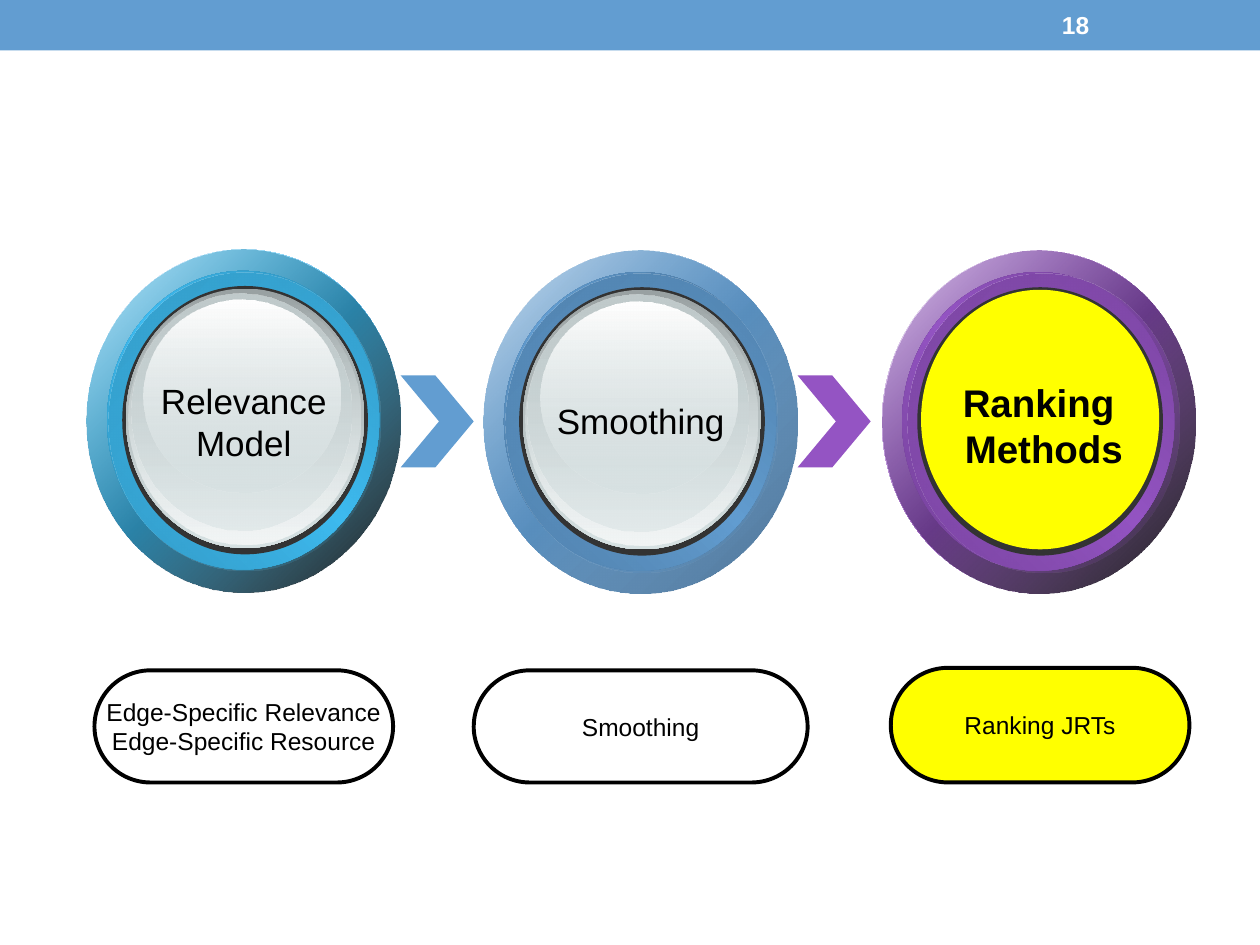
from dataclasses import dataclass

from lxml import etree
from pptx import Presentation
from pptx import util as u
from pptx.dml.color import RGBColor
from pptx.enum import shapes, text
from pptx.oxml import ns


@dataclass(frozen=True)
class Theme:
    font: str = "Arial"
    ink: str = "000000"
    white: str = "FFFFFF"
    blue: str = "629DD1"
    cyan: str = "3EBBF0"
    purple: str = "9454C3"
    highlight: str = "FFFF00"
    bezel: str = "333333"
    silver: str = "D6E1E2"
    small: int = 14
    label: int = 20
    strong: int = 22
    outline: float = 2.25


@dataclass(frozen=True)
class Stop:
    position: int
    color: str
    opacity: int = 100


@dataclass(frozen=True)
class Gradient:
    angle: int
    stops: tuple[Stop, ...]


@dataclass(frozen=True)
class Area:
    left: float
    top: float
    width: float
    height: float


@dataclass(frozen=True)
class Dial:
    left: float
    top: float
    color: str
    shade: Stop
    rim_dark: str
    gloss_dark: str
    gloss_shift: float = 0
    highlighted: bool = False


@dataclass(frozen=True)
class Label:
    area: Area
    lines: tuple[str, ...]
    size: int
    bold: bool = False
    wrap: bool = True
    color: str = "000000"
    align: text.PP_ALIGN = text.PP_ALIGN.CENTER
    anchor: text.MSO_ANCHOR = text.MSO_ANCHOR.TOP


@dataclass(frozen=True)
class Pill:
    label: Label
    fill: str


THEME = Theme()
Kind = shapes.MSO_SHAPE

DIALS = (
    Dial(7, 1.99, THEME.purple, Stop(100, THEME.ink, 90), "714095", "7A45A0", 0.03, True),
    Dial(0.69, 1.98, THEME.cyan, Stop(100, THEME.ink, 90), "2F8FB8", "339AC5"),
    Dial(3.84, 1.99, THEME.blue, Stop(100, "467096"), "4B78A0", "5081AC"),
)
GLASS = (
    (Area(0.31, 0.31, 1.89, 2.06), Stop(0, "99A1A2"), Stop(100, THEME.silver)),
    (Area(0.33, 0.33, 1.84, 2.01), Stop(0, THEME.silver, 0), Stop(100, "F2F5F5")),
    (Area(0.35, 0.35, 1.75, 1.88), Stop(0, "C1CBCC"), Stop(100, THEME.silver, 48)),
    (Area(0.45, 0.4, 1.56, 1.53), Stop(0, THEME.white), Stop(100, THEME.silver, 38)),
)
CHEVRONS = ((3.18, THEME.blue), (6.33, THEME.purple))
LABELS = (
    Label(Area(8.33, 0.02, 1.17, 0.36), ("18",), THEME.small, bold=True, color=THEME.white,
          align=text.PP_ALIGN.LEFT, anchor=text.MSO_ANCHOR.MIDDLE),
    Label(Area(0.83, 2.96, 2.21, 0.77), ("Relevance", "Model"), THEME.label),
    Label(Area(3.98, 3.12, 2.21, 0.44), ("Smoothing",), THEME.label),
    Label(Area(7.53, 2.96, 1.51, 0.84), ("Ranking ", "Methods"), THEME.strong,
          bold=True, wrap=False),
)


def pill(area: Area, fill: str, *lines: str) -> Pill:
    return Pill(Label(area, lines, THEME.small, wrap=False, anchor=text.MSO_ANCHOR.MIDDLE), fill)


PILLS = (
    pill(Area(7.07, 5.3, 2.37, 0.91), THEME.highlight, "Ranking JRTs"),
    pill(Area(0.75, 5.32, 2.37, 0.89), THEME.white,
         "Edge-Specific Relevance", "Edge-Specific Resource"),
    pill(Area(3.76, 5.32, 2.65, 0.89), THEME.white, "Smoothing"),
)


def inches(area: Area) -> tuple[u.Length, ...]:
    return tuple(u.Inches(v) for v in (area.left, area.top, area.width, area.height))


def set_gradient(shape, gradient: Gradient) -> None:
    """Replace the shape's fill by a linear gradient whose stops may be translucent."""
    shape.fill.background()
    old_fill = shape._element.spPr.find(ns.qn("a:noFill"))
    grad = etree.Element(ns.qn("a:gradFill"), rotWithShape="1")
    stop_list = etree.SubElement(grad, ns.qn("a:gsLst"))
    for stop in gradient.stops:
        node = etree.SubElement(stop_list, ns.qn("a:gs"), pos=str(stop.position * 1000))
        color = etree.SubElement(node, ns.qn("a:srgbClr"), val=stop.color)
        if stop.opacity < 100:
            etree.SubElement(color, ns.qn("a:alpha"), val=str(stop.opacity * 1000))
    etree.SubElement(grad, ns.qn("a:lin"), ang=str(gradient.angle * 60000), scaled="1")
    old_fill.getparent().replace(old_fill, grad)


def add_shape(parent, kind: Kind, area: Area, fill: str | Gradient):
    shape = parent.shapes.add_shape(kind, *inches(area))
    shape.shadow.inherit = False
    shape.line.fill.background()
    if isinstance(fill, Gradient):
        set_gradient(shape, fill)
    else:
        shape.fill.solid()
        shape.fill.fore_color.rgb = RGBColor.from_string(fill)
    return shape


def write_label(box, label: Label) -> None:
    frame = box.text_frame
    frame.word_wrap = label.wrap
    frame.vertical_anchor = label.anchor
    frame.text = "\n".join(label.lines)
    for para in frame.paragraphs:
        para.alignment = label.align
        para.font.name = THEME.font
        para.font.size = u.Pt(label.size)
        para.font.bold = label.bold
        para.font.color.rgb = RGBColor.from_string(label.color)


def draw_dial(page, dial: Dial) -> None:
    """Stack the ellipses of one dial: outer ring, rim, bezel, then its face."""
    group = page.shapes.add_group_shape()
    ring = Area(0, 0, 2.49, 2.72)
    middle = Stop(50, dial.color)
    layers = [
        (ring, Gradient(45, (Stop(0, THEME.white), middle, Stop(100, THEME.white)))),
        (ring, Gradient(45, (Stop(0, dial.color, 32), dial.shade))),
        (Area(0.16, 0.17, 2.16, 2.37),
         Gradient(315, (Stop(0, dial.rim_dark), middle, Stop(100, dial.rim_dark)))),
        (Area(0.17 + dial.gloss_shift, 0.18, 2.16, 2.37),
         Gradient(45, (Stop(0, dial.gloss_dark), Stop(100, dial.color, 0)))),
        (Area(0.28, 0.29, 1.95, 2.13), THEME.bezel),
    ]
    if dial.highlighted:
        layers.append((GLASS[0][0], THEME.highlight))
    else:
        layers += [(area, Gradient(90, tuple(stops))) for area, *stops in GLASS]
    for area, fill in layers:
        placed = Area(dial.left + area.left, dial.top + area.top, area.width, area.height)
        add_shape(group, Kind.OVAL, placed, fill)


def draw_pill(page, item: Pill) -> None:
    shape = add_shape(page, Kind.ROUNDED_RECTANGLE, item.label.area, item.fill)
    shape.adjustments[0] = 0.5
    shape.line.color.rgb = RGBColor.from_string(THEME.ink)
    shape.line.width = u.Pt(THEME.outline)
    write_label(shape, item.label)


def main() -> None:
    deck = Presentation()
    deck.slide_width, deck.slide_height = u.Inches(10), u.Inches(7.5)
    page = deck.slides.add_slide(deck.slide_layouts.get_by_name("Blank"))
    add_shape(page, Kind.RECTANGLE, Area(0, 0, 10, 0.4), THEME.blue)
    for left, color in CHEVRONS:
        chevron = add_shape(page, Kind.CHEVRON, Area(left, 2.98, 0.58, 0.73), color)
        chevron.adjustments[0] = 0.525
    for dial in DIALS:
        draw_dial(page, dial)
    for label in LABELS:
        write_label(page.shapes.add_textbox(*inches(label.area)), label)
    for item in PILLS:
        draw_pill(page, item)
    deck.save("out.pptx")


if __name__ == "__main__":
    main()
